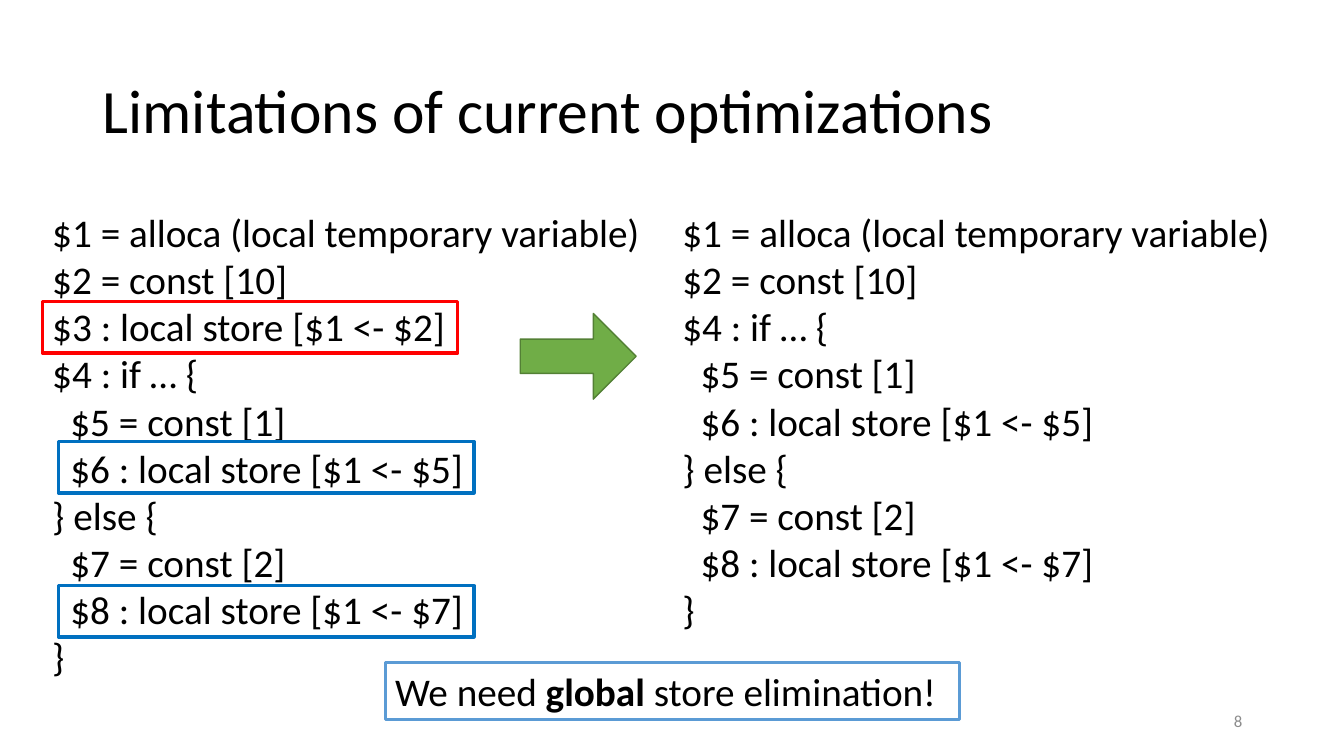
from pptx import Presentation
from pptx.dml.color import RGBColor
from pptx.enum.shapes import MSO_SHAPE
from pptx.enum.text import MSO_ANCHOR, MSO_AUTO_SIZE, PP_ALIGN
from pptx.util import Pt

RECT, ARROW = MSO_SHAPE.RECTANGLE, MSO_SHAPE.RIGHT_ARROW
MIDDLE, GROW = MSO_ANCHOR.MIDDLE, MSO_AUTO_SIZE.SHAPE_TO_FIT_TEXT
LEFT, RIGHT = PP_ALIGN.LEFT, PP_ALIGN.RIGHT

PX = 9144  # 100 px to the inch
INDENT = 18
COLORS = {name: RGBColor.from_string(code) for name, code in {
    "text": "000000", "number": "8C8C8C", "border": "5B9BD5",
    "red": "FF0000", "blue": "0070C0",
    "arrow": "70AD47", "edge": "538035"}.items()}

HEAD = ["$1 = alloca (local temporary variable)", "$2 = const [10]"]
STORE = ["$3 : local store [$1 <- $2]"]
# A leading tab marks a line inside a branch.
BRANCH = ["$4 : if … {", "\t$5 = const [1]", "\t$6 : local store [$1 <- $5]",
          "} else {", "\t$7 = const [2]", "\t$8 : local store [$1 <- $7]", "}"]


def style(para, size, color="text", align=LEFT):
    para.alignment = align
    para.font.name = "Calibri"
    para.font.size = Pt(size)
    para.font.color.rgb = COLORS[color]


def add_text(x, y, w, h):
    box = slide.shapes.add_textbox(x * PX, y * PX, w * PX, h * PX)
    box.text_frame.word_wrap = True
    return box


deck = Presentation()
deck.slide_width, deck.slide_height = 1333 * PX, 750 * PX
slide = deck.slides.add_slide(deck.slide_layouts[5])

title = slide.shapes.title
title.left, title.top, title.width, title.height = [
    n * PX for n in (92, 40, 1150, 145)]
title.text_frame.text = "Limitations of current optimizations"
title.text_frame.vertical_anchor = MIDDLE
style(title.text_frame.paragraphs[0], 44)
title.text_frame.paragraphs[0].line_spacing = 0.9

# Code before and after
for x, h, code in [(42, 481, HEAD + STORE + BRANCH), (667, 434, HEAD + BRANCH)]:
    frame = add_text(x, 202, 624, h).text_frame
    frame.auto_size = GROW
    frame.text = "\n".join(line.strip() for line in code)
    for para, line in zip(frame.paragraphs, code):
        style(para, 28)
        if line.startswith("\t"):
            para._p.get_or_add_pPr().set("marL", str(INDENT * PX))

# Conclusion
note = add_text(382, 657, 570, 57)
note.line.color.rgb = COLORS["border"]
note.line.width = Pt(2)
note.text_frame.auto_size = GROW
para = note.text_frame.paragraphs[0]
style(para, 28)
for text, bold in [("We need ", False), ("global", True),
                   (" store elimination!", False)]:
    run = para.add_run()
    run.text = text
    run.font.bold = bold

number = add_text(942, 695, 300, 40).text_frame
number.vertical_anchor = MIDDLE
number.text = "8"
style(number.paragraphs[0], 12, "number", RIGHT)

# Frames around the stores
for x, y, color in [(42, 299, "red"), (58, 438, "blue"), (58, 581, "blue")]:
    mark = slide.shapes.add_shape(RECT, x * PX, y * PX, 412 * PX, 51 * PX)
    mark.shadow.inherit = False
    mark.fill.background()
    mark.line.color.rgb = COLORS[color]
    mark.line.width = Pt(2.5)

arrow = slide.shapes.add_shape(ARROW, 516 * PX, 311 * PX, 115 * PX, 85 * PX)
arrow.shadow.inherit = False
arrow.adjustments[0] = 0.4
arrow.fill.solid()
arrow.fill.fore_color.rgb = COLORS["arrow"]
arrow.line.color.rgb = COLORS["edge"]
arrow.line.width = Pt(1)

deck.save("out.pptx")
